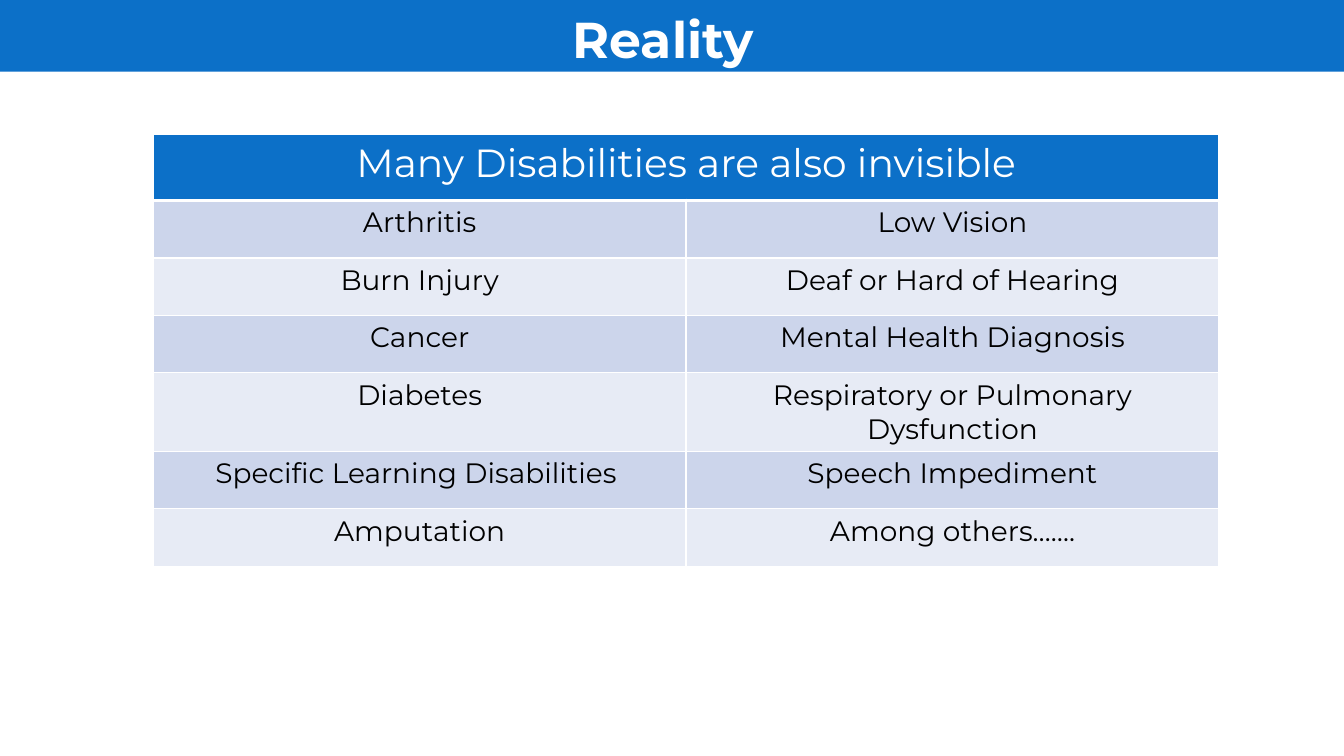
import pptx
import pptx.util
import pptx.dml.color
import pptx.enum.shapes
import pptx.enum.text
import pptx.oxml
import pptx.oxml.ns

Inches, Pt = pptx.util.Inches, pptx.util.Pt
CENTER = pptx.enum.text.PP_ALIGN.CENTER

THEME = {
    "font": "Montserrat",
    "blue": "0C70C8",
    "white": "FFFFFF",
    "black": "000000",
    "bands": ("CCD5EB", "E7EBF5"),
    "title": 36,
    "heading": 28,
    "body": 20,
}
HEADING = "Many Disabilities are also invisible"
DISABILITIES = [
    ("Arthritis", "Low Vision"),
    ("Burn Injury", "Deaf or Hard of Hearing"),
    ("Cancer", "Mental Health Diagnosis"),
    ("Diabetes", "Respiratory or Pulmonary Dysfunction"),
    ("Specific Learning Disabilities ", "Speech Impediment"),
    ("Amputation", "Among others……."),
]
HEADING_HEIGHT, ROW_HEIGHT, TWO_LINE_HEIGHT = 0.66, 0.57, 0.78
COLUMN_WIDTH = 5.285


def write(frame, text, size, color, bold=False):
    para = frame.paragraphs[0]
    para.alignment = CENTER
    span = para.add_run()
    span.text = text
    formats = {"name": THEME["font"], "size": Pt(size), "bold": bold}
    for name, value in formats.items():
        setattr(span.font, name, value)
    span.font.color.rgb = pptx.dml.color.RGBColor.from_string(color)
    return para


def style_cell(cell, fill, widths):
    """Give a cell white borders, widths in points by side, and a solid fill."""
    properties = cell._tc.get_or_add_tcPr()
    for side, width in widths.items():
        properties.append(pptx.oxml.parse_xml(
            f'<a:ln{side} {pptx.oxml.ns.nsdecls("a")} w="{Pt(width)}"><a:solidFill>'
            f'<a:srgbClr val="{THEME["white"]}"/></a:solidFill></a:ln{side}>'))
    cell.fill.solid()
    cell.fill.fore_color.rgb = pptx.dml.color.RGBColor.from_string(fill)


deck = pptx.Presentation()
deck.slide_width, deck.slide_height = Inches(13.33), Inches(7.5)
page = deck.slides.add_slide(deck.slide_layouts[6])

# Title band
band = page.shapes.add_shape(pptx.enum.shapes.MSO_SHAPE.RECTANGLE,
                             0, 0, deck.slide_width, Inches(0.71))
band.shadow.inherit = False
band.fill.solid()
band.fill.fore_color.rgb = pptx.dml.color.RGBColor.from_string(THEME["blue"])
band.line.fill.background()

title = page.shapes.add_textbox(Inches(0.84), Inches(0.1), Inches(11.48), Inches(0.7))
title.text_frame.word_wrap = True
para = write(title.text_frame, "Reality", THEME["title"], THEME["white"], bold=True)
para.line_spacing = 0.9

# Table of disabilities
heights = [HEADING_HEIGHT] + [
    TWO_LINE_HEIGHT if max(map(len, pair)) > 32 else ROW_HEIGHT for pair in DISABILITIES]
table = page.shapes.add_table(len(heights), 2, Inches(1.52), Inches(1.33),
                              Inches(2 * COLUMN_WIDTH), Inches(sum(heights))).table
for column in table.columns:
    column.width = Inches(COLUMN_WIDTH)
for row, height in zip(table.rows, heights):
    row.height = Inches(height)

for cell in table.rows[0].cells:
    style_cell(cell, THEME["blue"], {"L": 1, "R": 1, "T": 1, "B": 3})
table.cell(0, 0).merge(table.cell(0, 1))
write(table.cell(0, 0).text_frame, HEADING, THEME["heading"], THEME["white"])

for index, pair in enumerate(DISABILITIES):
    widths = {"L": 1, "R": 1, "T": 1 if index else 3, "B": 1}
    for cell, text in zip(table.rows[index + 1].cells, pair):
        style_cell(cell, THEME["bands"][index % 2], widths)
        write(cell.text_frame, text, THEME["body"], THEME["black"])

deck.save("out.pptx")
